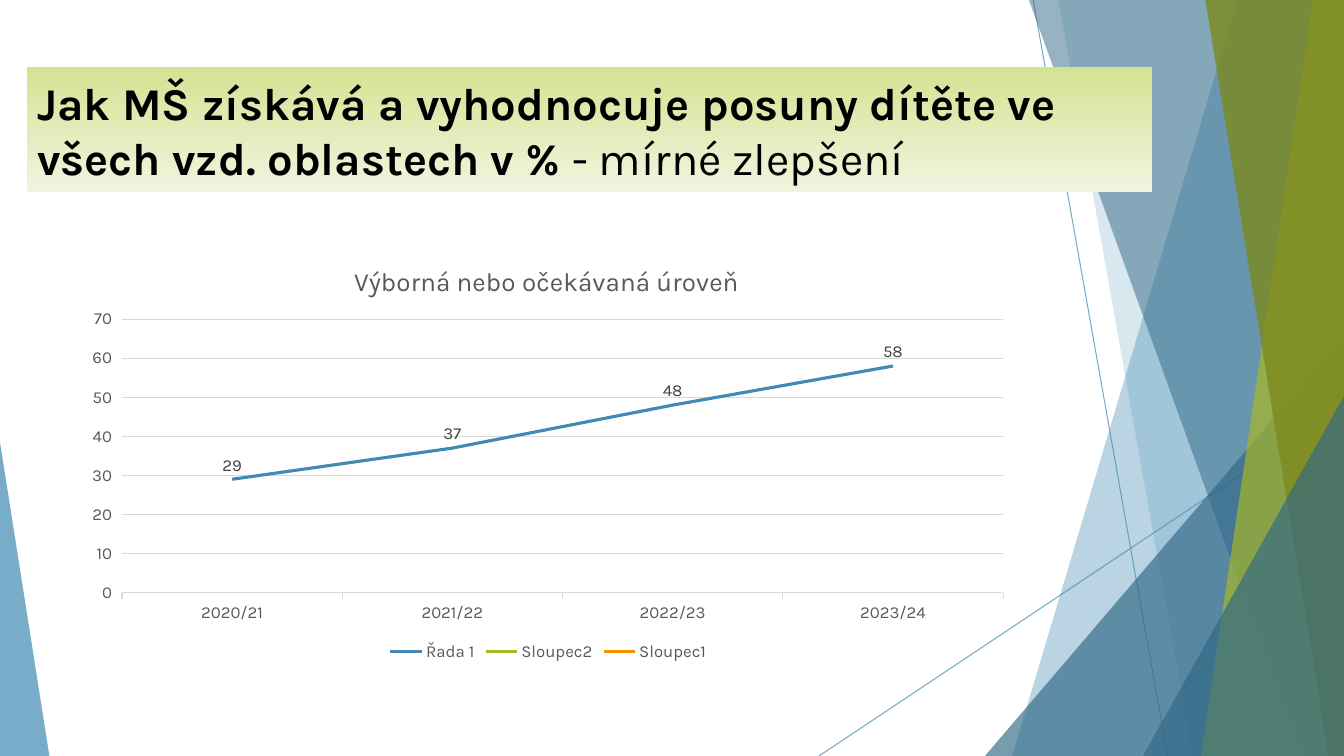
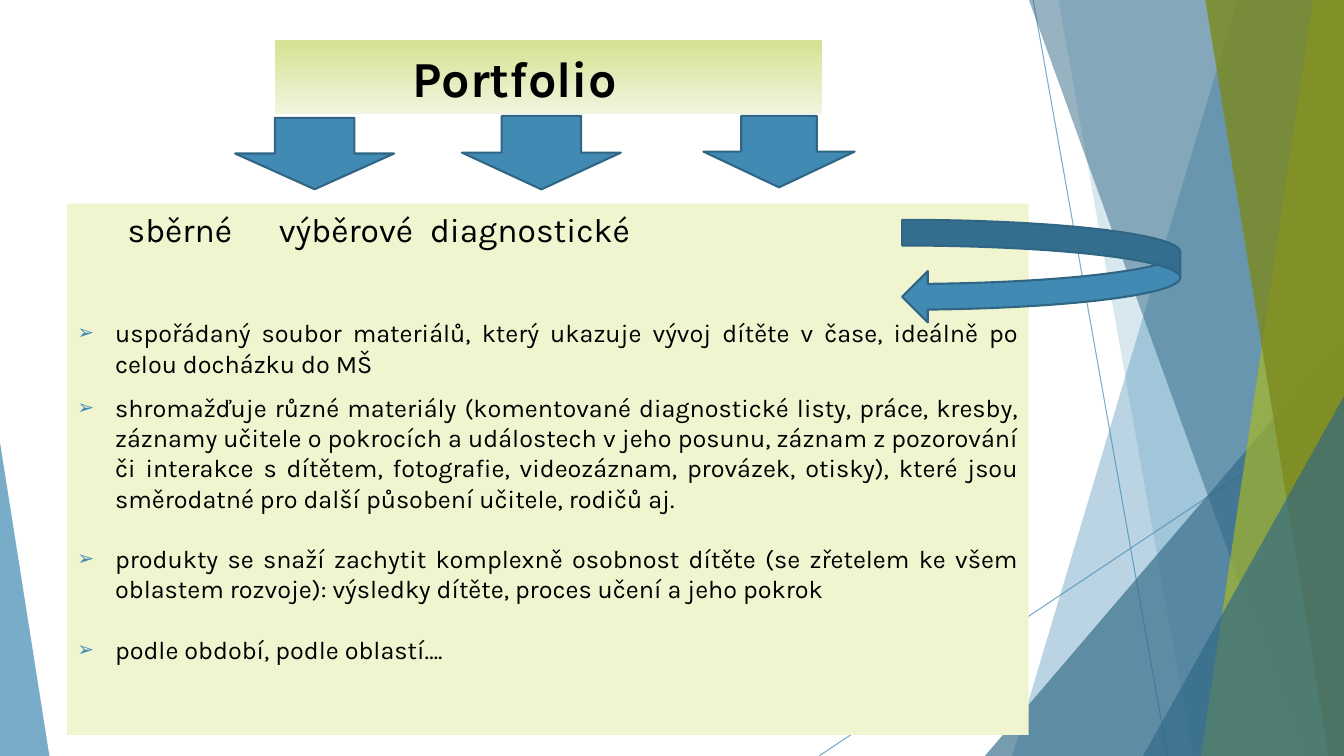
import pptx
import pptx.chart.data
import pptx.dml.color
import pptx.enum.chart
import pptx.enum.shapes
import pptx.enum.text
import pptx.oxml
import pptx.oxml.ns
import pptx.util

Pt = pptx.util.Pt
qn = pptx.oxml.ns.qn
SHAPE = pptx.enum.shapes.MSO_SHAPE
ALIGN = pptx.enum.text.PP_ALIGN
FONT = "Karla"
WIDE, HIGH = 960, 540
HUES = {
    "blue": "418AB3", "navy": "316886", "edge": "306684",
    "lime": "A6B727", "olive": "7D891D", "amber": "F69200",
    "top": "D4E292", "base": "F0F5DF", "panel": "F0F5D0",
    "black": "000000", "grey": "595959", "dark": "404040", "grid": "D9D9D9",
}
POINTS = [
    ("uspořádaný soubor materiálů, který ukazuje vývoj dítěte v čase, "
     "ideálně po celou docházku do MŠ", 49),
    ("shromažďuje různé materiály (komentované diagnostické listy, práce, kresby, "
     "záznamy učitele o pokrocích a událostech v jeho posunu, záznam z pozorování "
     "či interakce s dítětem, fotografie, videozáznam, provázek, otisky), které jsou "
     "směrodatné pro další působení učitele, rodičů aj.", 10),
    ("produkty se snaží zachytit komplexně osobnost dítěte (se zřetelem ke všem "
     "oblastem rozvoje): výsledky dítěte, proces učení a jeho pokrok", 21.7),
    ("podle období, podle oblastí….", 21.7),
]


def rgb(hue):
    """Return the named colour."""
    return pptx.dml.color.RGBColor.from_string(HUES[hue])


def node(parent, tag, **attrs):
    """Append an XML child with its attributes."""
    child = pptx.oxml.ns.qn(tag)
    item = parent.makeelement(child, {key: str(val) for key, val in attrs.items()})
    parent.append(item)
    return item


def fade(shape, share):
    """Make the colours of a shape partly clear."""
    for tint in shape.element.iter(qn("a:srgbClr")):
        node(tint, "a:alpha", val=share * 1000)


def paint(shape, hue, share):
    """Fill a pane without outline or shadow."""
    shape.shadow.inherit = False
    shape.fill.solid()
    shape.fill.fore_color.rgb = rgb(hue)
    shape.line.fill.background()
    fade(shape, share)


def ray(slide, start, end):
    """Draw a thin line of the backdrop."""
    line = slide.shapes.add_connector(
        pptx.enum.shapes.MSO_CONNECTOR.STRAIGHT, *map(Pt, start + end))
    line.line.color.rgb = rgb("blue")
    line.line.width = Pt(0.75)
    fade(line, 70)
    node(line.element.spPr, "a:effectLst")


def pane(slide, top, foot, hue, share):
    """Draw a slanted pane that reaches the right edge."""
    form = slide.shapes.build_freeform(Pt(top), 0, scale=1.0)
    edge = [(WIDE, 0), (WIDE, HIGH), (foot, HIGH)]
    form.add_line_segments([(Pt(x), Pt(y)) for x, y in edge], close=True)
    paint(form.convert_to_shape(), hue, share)


def wedge(slide, left, top, width, peak, hue, share):
    """Draw a triangle that stands on the lower edge."""
    shape = slide.shapes.add_shape(
        SHAPE.ISOSCELES_TRIANGLE, *map(Pt, (left, top, width, HIGH - top)))
    shape.adjustments[0] = peak
    paint(shape, hue, share)


def scene(deck, slide):
    """Draw the backdrop and hand it to the slide master."""
    ray(slide, (738, 0), (834, HIGH))
    ray(slide, (WIDE, 290), (585, HIGH))
    pane(slide, 884, 723, "blue", 36)
    pane(slide, 756, 852, "blue", 20)
    wedge(slide, 703.5, 240, 256.5, 1, "navy", 66)
    pane(slide, 735, 930, "navy", 50)
    pane(slide, 938, 858, "lime", 70)
    pane(slide, 861, 949, "olive", 80)
    wedge(slide, 816.5, 283, 143.5, 1, "navy", 66)
    wedge(slide, 0, 316, 35.3, 0, "blue", 70)
    drawn = [item for item in slide.shapes if not item.is_placeholder]
    for mark, item in enumerate(drawn, 20):
        item.element.xpath(".//p:cNvPr")[0].set("id", str(mark))
        deck.slide_master.shapes.element.append(item.element)


def place(shape, box):
    """Move a shape to its box."""
    shape.left, shape.top, shape.width, shape.height = map(Pt, box)


def style(font, size, hue, bold=False):
    """Set the look of a font."""
    font.name, font.size, font.bold = FONT, Pt(size), bold
    font.color.rgb = rgb(hue)


def write(para, text, size, bold=False):
    """Add a run to a paragraph."""
    run = para.add_run()
    run.text = text
    style(run.font, size, "black", bold)


def title(slide, box, runs, size, inset=7.2):
    """Fill the title on its green band."""
    shape = slide.shapes.title
    place(shape, box)
    shape.fill.gradient()
    shape.fill.gradient_angle = 270
    for stop, hue in zip(shape.fill.gradient_stops, ("top", "base")):
        stop.color.rgb = rgb(hue)
    frame = shape.text_frame
    frame.word_wrap = True
    frame.auto_size = pptx.enum.text.MSO_AUTO_SIZE.NONE
    frame.vertical_anchor = pptx.enum.text.MSO_ANCHOR.MIDDLE
    frame.margin_left = Pt(inset)
    para = frame.paragraphs[0]
    para.alignment = ALIGN.LEFT
    for text, bold in runs:
        write(para, text, size, bold)


def space(para, gap, left):
    """Set paragraph gaps and a hanging indent."""
    para.space_before, para.space_after = Pt(gap), Pt(0)
    props = para._p.get_or_add_pPr()
    props.set("marL", str(Pt(left)))
    props.set("indent", str(-Pt(left)))
    return props


def heads(para, words, stops):
    """Set words at tab stops."""
    para.alignment = ALIGN.LEFT
    props = space(para, 0, 0)
    node(props, "a:buNone")
    tabs = node(props, "a:tabLst")
    for stop in stops:
        node(tabs, "a:tab", pos=Pt(stop), algn="l")
    for word in words:
        write(para, "\t" + word, 24)


def point(para, text, gap):
    """Write a justified point with an arrow bullet."""
    para.alignment = ALIGN.JUSTIFY
    props = space(para, gap, 27)
    node(node(props, "a:buClr"), "a:srgbClr", val=HUES["blue"])
    node(props, "a:buSzPct", val=80000)
    node(props, "a:buChar", char="➢")
    write(para, text, 18)


def body(slide, box):
    """Fill the body panel."""
    shape = slide.placeholders[1]
    place(shape, box)
    shape.fill.solid()
    shape.fill.fore_color.rgb = rgb("panel")
    frame = shape.text_frame
    frame.word_wrap = True
    frame.auto_size = pptx.enum.text.MSO_AUTO_SIZE.NONE
    frame.vertical_anchor = pptx.enum.text.MSO_ANCHOR.TOP
    heads(frame.paragraphs[0], ("sběrné", "výběrové", "diagnostické"),
          (109.5, 246, 388))
    for text, gap in POINTS:
        point(frame.add_paragraph(), text, gap)


def arrow(slide, kind, box):
    """Draw a blue block arrow."""
    shape = slide.shapes.add_shape(kind, *map(Pt, box))
    shape.shadow.inherit = False
    shape.fill.solid()
    shape.fill.fore_color.rgb = rgb("blue")
    shape.line.color.rgb = rgb("edge")
    shape.line.width = Pt(1.5)


def fix(part, **sides):
    """Pin a chart part at shares of the chart."""
    frame = part.find(qn("c:layout"))
    if frame is None:
        frame = node(part, "c:layout")
        part.insert(1 if part.tag == qn("c:title") else 0, frame)
    for child in list(frame):
        frame.remove(child)
    spot = node(frame, "c:manualLayout")
    if "w" in sides:
        node(spot, "c:layoutTarget", val="inner")
    for mode in ("xMode", "yMode"):
        node(spot, "c:" + mode, val="edge")
    for side, share in sides.items():
        node(spot, "c:" + side, val=share)


def axes(chart):
    """Format both axes and the grid."""
    marks = pptx.enum.chart.XL_TICK_MARK
    across, up = chart.category_axis, chart.value_axis
    for axis in (across, up):
        style(axis.tick_labels.font, 12, "grey")
        axis.major_tick_mark = marks.OUTSIDE
        axis.minor_tick_mark = marks.NONE
    up.minimum_scale, up.maximum_scale, up.major_unit = 0, 70, 10
    up.format.line.fill.background()
    for line in (across.format.line, up.major_gridlines.format.line):
        line.color.rgb = rgb("grid")
        line.width = Pt(0.75)


def graph(slide, box):
    """Add the line chart."""
    data = pptx.chart.data.CategoryChartData()
    data.categories = ["2020/21", "2021/22", "2022/23", "2023/24"]
    data.add_series("Řada 1", (29, 37, 48, 58))
    for name in ("Sloupec2", "Sloupec1"):
        data.add_series(name, [None] * 4)
    kinds = pptx.enum.chart
    chart = slide.shapes.add_chart(
        kinds.XL_CHART_TYPE.LINE, *map(Pt, box), data).chart
    style(chart.font, 10, "black")
    chart.has_title = True
    run = chart.chart_title.text_frame.paragraphs[0].add_run()
    run.text = "Výborná nebo očekávaná úroveň"
    style(run.font, 18.6, "grey")
    chart.has_legend = True
    chart.legend.position = kinds.XL_LEGEND_POSITION.BOTTOM
    chart.legend.include_in_layout = False
    style(chart.legend.font, 12, "grey")
    plot = chart.plots[0]
    plot.vary_by_categories = False
    for row, hue in zip(plot.series, ("blue", "lime", "amber")):
        row.smooth = False
        row.format.line.color.rgb = rgb(hue)
        row.format.line.width = Pt(2.25)
        labels = row.data_labels
        labels.show_value = True
        labels.position = kinds.XL_LABEL_POSITION.ABOVE
        style(labels.font, 12, "dark")
    axes(chart)
    fix(chart.chart_title._element, x=0.29, y=0.05)
    fix(plot._element.getparent(), x=0.05, y=0.19, w=0.93, h=0.64)


def main():
    """Build and save both slides."""
    deck = pptx.Presentation()
    deck.slide_width, deck.slide_height = Pt(WIDE), Pt(HIGH)
    trend = deck.slides.add_slide(deck.slide_layouts[5])
    scene(deck, trend)
    title(trend, (19.4, 48, 803.5, 89.3), [
        ("Jak MŠ získává a vyhodnocuje posuny dítěte ve všech vzd. oblastech v % ", True),
        ("- mírné zlepšení", False)], 32.4)
    graph(trend, (53.3, 170, 676.8, 305.3))

    folio = deck.slides.add_slide(deck.slide_layouts[1])
    title(folio, (196.5, 28.8, 391, 52.5), [("Portfolio", True)], 36, 98)
    body(folio, (48, 145.5, 686.7, 379.4))
    for box in ((502.5, 82.8, 108, 51), (330, 82.8, 113.5, 52.5), (168, 84.2, 113.5, 51)):
        arrow(folio, SHAPE.DOWN_ARROW, box)
    arrow(folio, SHAPE.CURVED_LEFT_ARROW, (644.4, 157, 198.7, 73.4))
    deck.save("out.pptx")


if __name__ == "__main__":
    main()
